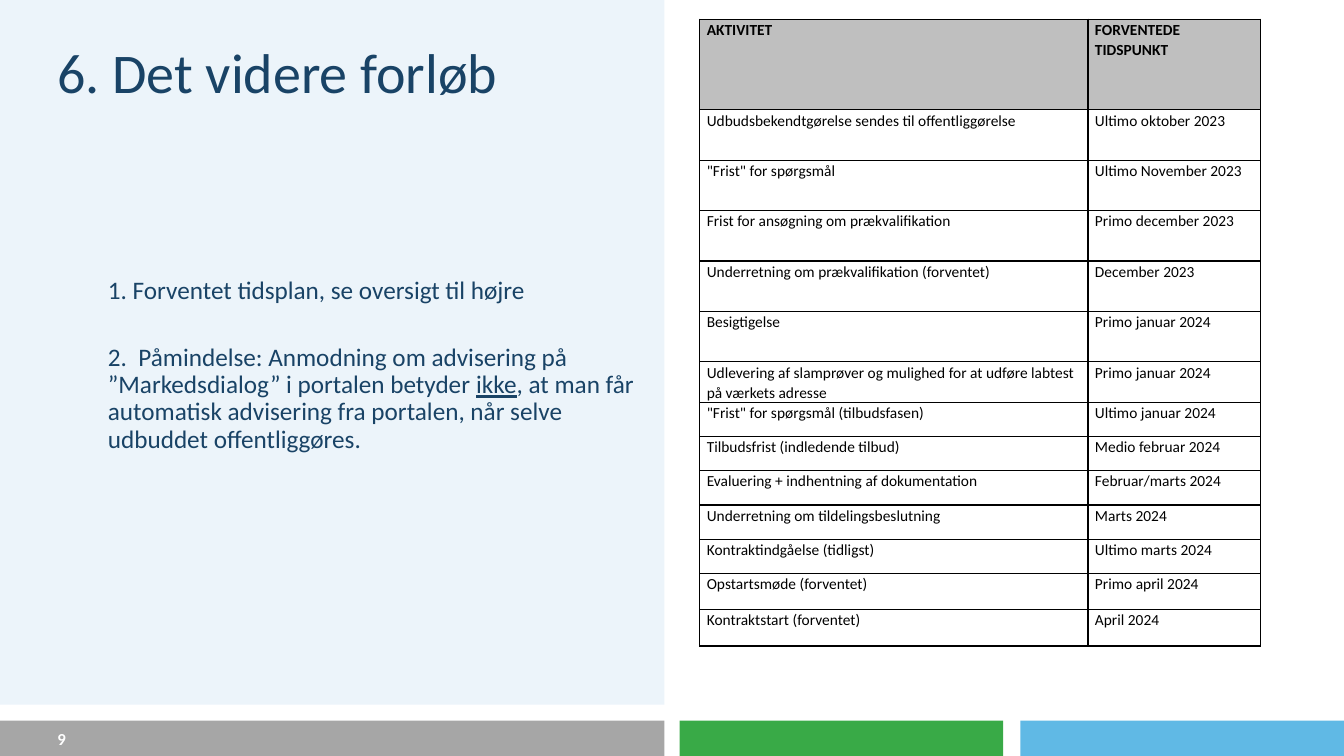
from lxml import etree
from pptx import Presentation
from pptx.dml.color import RGBColor
from pptx.enum import shapes, text
from pptx.oxml import ns
from pptx.util import Inches, Pt

NAVY, BLACK, WHITE = "194366", "000000", "FFFFFF"


def color(code):
    return RGBColor.from_string(code)


def add_run(para, words, size, code, bold=False, under=False):
    run = para.add_run()
    run.text = words
    font = run.font
    font.name, font.size, font.bold = "Calibri", Pt(size), bold
    font.underline = under
    font.color.rgb = color(code)


deck = Presentation()
deck.slide_width, deck.slide_height = Inches(13.33), Inches(7.5)
slide = deck.slides.add_slide(deck.slide_layouts[6])

# Footer bars and left panel
bars = [
    (0, 7.15, 6.59, 0.35, "A6A6A6"),
    (6.74, 7.15, 3.21, 0.35, "39AA47"),
    (10.12, 7.15, 3.21, 0.35, "60B9E5"),
    (0, 0, 6.59, 6.99, "C1DBF0"),
]
for *place, code in bars:
    bar = slide.shapes.add_shape(shapes.MSO_SHAPE.RECTANGLE, *map(Inches, place))
    bar.shadow.inherit = False
    bar.fill.solid()
    bar.fill.fore_color.rgb = color(code)
    bar.line.fill.background()

# The panel, added last, is 30 % opaque
tint = bar.fill._xPr.find(".//" + ns.qn("a:srgbClr"))
etree.SubElement(tint, ns.qn("a:alpha"), val="30000")

# Page number, title and body frames
frames = []
for place in [(0.57, 7.15, 0.64, 0.35), (0.57, 0.45, 5.82, 1.3), (0.57, 2.76, 5.82, 3.75)]:
    frame = slide.shapes.add_textbox(*map(Inches, place)).text_frame
    frame.word_wrap = True
    frame.margin_left = frame.margin_right = frame.margin_top = frame.margin_bottom = 0
    frames.append(frame)
page, title, body = frames

page.vertical_anchor = text.MSO_ANCHOR.MIDDLE
add_run(page.paragraphs[0], "9", 12, WHITE, bold=True)

title.paragraphs[0].line_spacing = 0.9
add_run(title.paragraphs[0], "6. Det videre forløb", 40, NAVY)

# Body points, with the stressed word underlined
plan = body.paragraphs[0]
note = body.add_paragraph()
note.space_before = Pt(24)
for para in (plan, note):
    para.line_spacing = 0.9
    para.space_after = Pt(4)
    props = para._p.get_or_add_pPr()
    props.set("marL", str(Inches(0.5)))
    props.set("indent", "0")
add_run(plan, "1. Forventet tidsplan, se oversigt til højre", 18, NAVY)
add_run(note, "2.  Påmindelse: Anmodning om advisering på ”Markedsdialog” i portalen betyder ", 18, NAVY)
add_run(note, "ikke", 18, NAVY, under=True)
add_run(note, ", at man får automatisk advisering fra portalen, når selve udbuddet offentliggøres.", 18, NAVY)

# Timetable: activity, expected time
rows = [
    ("AKTIVITET", "FORVENTEDE TIDSPUNKT"),
    ("Udbudsbekendtgørelse sendes til offentliggørelse", "Ultimo oktober 2023"),
    ('"Frist" for spørgsmål', "Ultimo November 2023"),
    ("Frist for ansøgning om prækvalifikation", "Primo december 2023"),
    ("Underretning om prækvalifikation (forventet)", "December 2023"),
    ("Besigtigelse", "Primo januar 2024"),
    ("Udlevering af slamprøver og mulighed for at udføre labtest på værkets adresse", "Primo januar 2024"),
    ('"Frist" for spørgsmål (tilbudsfasen)', "Ultimo januar 2024"),
    ("Tilbudsfrist (indledende tilbud)", "Medio februar 2024"),
    ("Evaluering + indhentning af dokumentation", "Februar/marts 2024"),
    ("Underretning om tildelingsbeslutning", "Marts 2024"),
    ("Kontraktindgåelse (tidligst)", "Ultimo marts 2024"),
    ("Opstartsmøde (forventet)", "Primo april 2024"),
    ("Kontraktstart (forventet)", "April 2024"),
]
highs = [0.9] + [0.5] * 5 + [0.4] + [0.34] * 5 + [0.36] * 2

table = slide.shapes.add_table(
    len(rows), 2, Inches(6.94), Inches(0.19), Inches(5.56), Inches(sum(highs))
).table
table.first_row = table.horz_banding = False
for col, wide in zip(table.columns, (3.85, 1.71)):
    col.width = Inches(wide)

for i, (row, high) in enumerate(zip(rows, highs)):
    table.rows[i].height = Inches(high)
    for j, words in enumerate(row):
        cell = table.cell(i, j)
        cell.margin_left = cell.margin_right = Inches(0.07)
        cell.margin_top = cell.margin_bottom = 0
        para = cell.text_frame.paragraphs[0]
        para.line_spacing = 1.07
        para.space_after = Pt(8)
        add_run(para, words, 11, BLACK, bold=i == 0)

        # Borders go ahead of the fill
        props = cell._tc.get_or_add_tcPr()
        for side in ("lnL", "lnR", "lnT", "lnB"):
            edge = etree.SubElement(props, ns.qn("a:" + side), w=str(Pt(1)))
            ink = etree.SubElement(edge, ns.qn("a:solidFill"))
            etree.SubElement(ink, ns.qn("a:srgbClr"), val=BLACK)
        if i == 0:
            cell.fill.solid()
            cell.fill.fore_color.rgb = color("BFBFBF")
        else:
            cell.fill.background()

deck.save("out.pptx")
